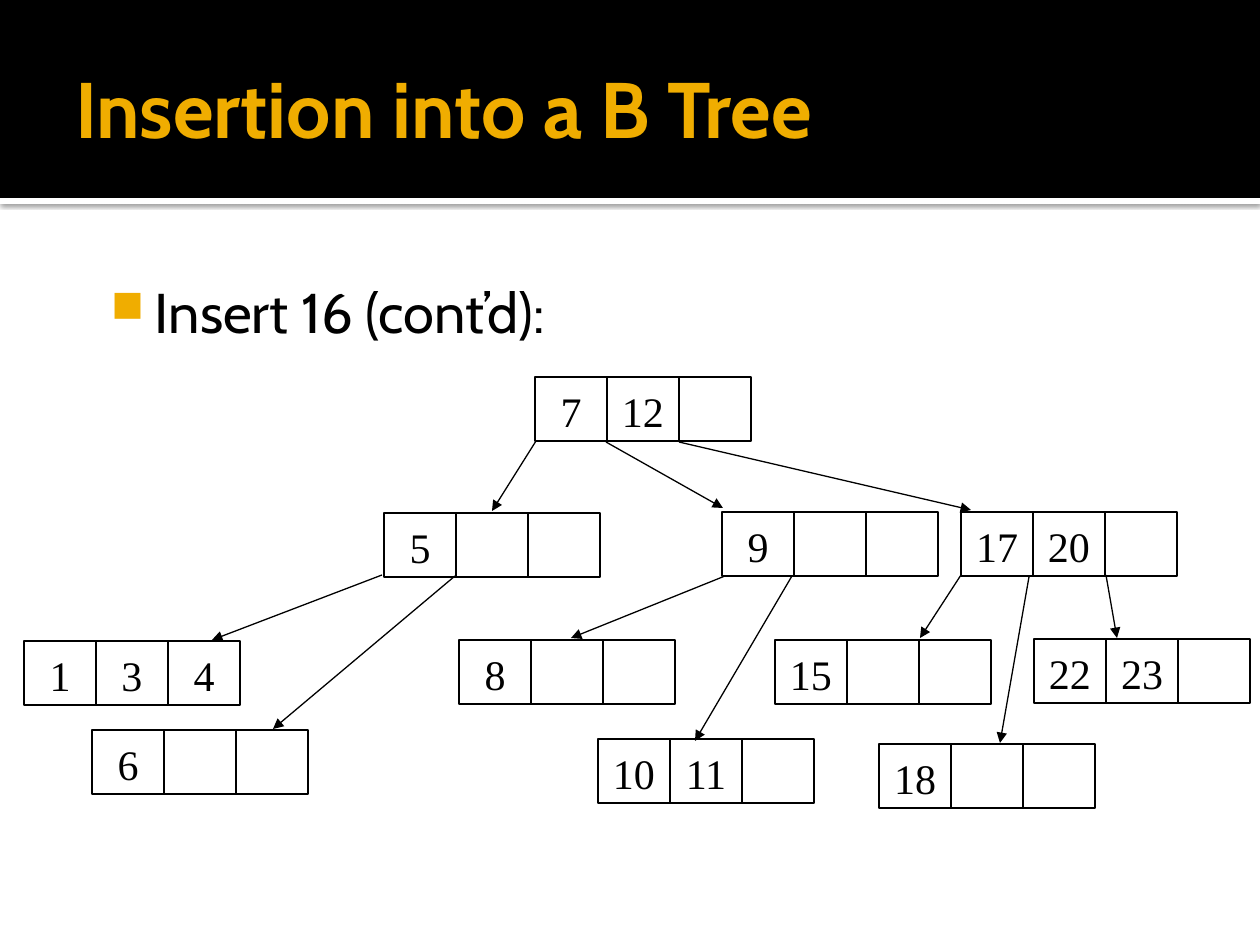
from lxml.etree import SubElement
from pptx import Presentation
from pptx.dml.color import RGBColor
from pptx.enum.shapes import MSO_CONNECTOR, MSO_SHAPE
from pptx.enum.text import MSO_ANCHOR, PP_ALIGN
from pptx.oxml import parse_xml
from pptx.oxml.ns import nsdecls, qn
from pptx.util import Emu, Pt

SCALE = 914400 / 126
CELL_W, CELL_H = 72, 64
BLACK, WHITE, GOLD = "000000", "FFFFFF", "F0AD00"

NODES = [
    (535, 377, ["7", "12", ""]),
    (384, 513, ["5", "", ""]),
    (722, 512, ["9", "", ""]),
    (961, 512, ["17", "20", ""]),
    (24, 641, ["1", "3", "4"]),
    (92, 730, ["6", "", ""]),
    (459, 640, ["8", "", ""]),
    (598, 739, ["10", "11", ""]),
    (775, 640, ["15", "", ""]),
    (879, 744, ["18", "", ""]),
    (1034, 639, ["22", "23", ""]),
]

ARROWS = [
    (536, 441, 492, 511), (606, 442, 723, 508), (679, 442, 971, 510),
    (382, 575, 212, 640), (455, 576, 273, 729),
    (725, 576, 571, 638), (792, 576, 695, 741),
    (961, 575, 920, 638), (1029, 577, 1000, 743), (1106, 575, 1117, 638),
]


def px(n):
    return Emu(round(n * SCALE))


def rgb(color):
    return RGBColor.from_string(color)


class Deck:
    title_font = "Cabin"
    key_font = "Times New Roman"

    def __init__(self, width, height):
        self.prs = Presentation()
        self.prs.slide_width, self.prs.slide_height = px(width), px(height)
        self.s = self.prs.slides.add_slide(self.prs.slide_layouts[5])

    def font(self, p, name, size, color, bold=False):
        p.font.name, p.font.size, p.font.bold = name, Pt(size), bold
        p.font.color.rgb = rgb(color)

    def margins(self, tf, left, top, right, bottom):
        tf.margin_left, tf.margin_top = px(left), px(top)
        tf.margin_right, tf.margin_bottom = px(right), px(bottom)

    def rect(self, x, y, w, h, fill=None, line=None):
        sp = self.s.shapes.add_shape(MSO_SHAPE.RECTANGLE, px(x), px(y), px(w), px(h))
        sp.shadow.inherit = False
        if fill:
            sp.fill.solid()
            sp.fill.fore_color.rgb = rgb(fill)
        else:
            sp.fill.background()
        if line:
            sp.line.color.rgb = rgb(line)
            sp.line.width = Pt(0.75)
        else:
            sp.line.fill.background()
        return sp

    def shadow(self, sp):
        effects = sp._element.spPr.find(qn("a:effectLst"))
        effects.append(parse_xml(
            f'<a:outerShdw {nsdecls("a")} blurRad="31750" dist="10160" dir="5400000">'
            f'<a:srgbClr val="{BLACK}"><a:alpha val="60000"/></a:srgbClr></a:outerShdw>'))

    def title(self, text, x, y, w, h):
        sp = self.s.shapes.title
        sp.left, sp.top, sp.width, sp.height = px(x), px(y), px(w), px(h)
        tf = sp.text_frame
        tf.text = text
        tf.vertical_anchor = MSO_ANCHOR.MIDDLE
        self.margins(tf, 12, 6, 6, 6)
        p = tf.paragraphs[0]
        p.alignment = PP_ALIGN.LEFT
        self.font(p, self.title_font, 45, GOLD, True)
        self.s.shapes._spTree.append(sp._element)

    def bullet(self, text, x, y, w, h):
        tf = self.s.shapes.add_textbox(px(x), px(y), px(w), px(h)).text_frame
        tf.word_wrap = True
        self.margins(tf, 8, 12, 12, 6)
        p = tf.paragraphs[0]
        p.text = text
        self.font(p, self.title_font, 32, BLACK)
        pPr = p._p.get_or_add_pPr()
        pPr.set("marL", str(px(60)))
        pPr.set("indent", str(px(-44)))
        marks = parse_xml(
            f'<a:pPr {nsdecls("a")}><a:buClr><a:srgbClr val="{GOLD}"/></a:buClr>'
            '<a:buSzPct val="80000"/><a:buChar char="■"/></a:pPr>')
        for i, mark in enumerate(list(marks)):
            pPr.insert(i, mark)

    def node(self, x, y, keys):
        for i, key in enumerate(keys):
            sp = self.rect(x + i * CELL_W, y, CELL_W, CELL_H, line=BLACK)
            if key:
                tf = sp.text_frame
                tf.vertical_anchor = MSO_ANCHOR.MIDDLE
                self.margins(tf, 0, 6, 0, 2)
                p = tf.paragraphs[0]
                p.text = key
                p.alignment = PP_ALIGN.CENTER
                self.font(p, self.key_font, 24, BLACK)

    def arrow(self, x1, y1, x2, y2):
        c = self.s.shapes.add_connector(
            MSO_CONNECTOR.STRAIGHT, px(x1), px(y1), px(x2), px(y2))
        c.line.color.rgb = rgb(BLACK)
        c.line.width = Pt(0.75)
        SubElement(c.line._get_or_add_ln(), qn("a:tailEnd"), type="triangle")
        SubElement(c._element.spPr, qn("a:effectLst"))


def main():
    deck = Deck(1260, 945)
    deck.shadow(deck.rect(0, 198, 1260, 6, fill=WHITE))
    deck.rect(0, 0, 1260, 198, fill=BLACK)
    deck.bullet("Insert 16 (cont’d):", 87, 266, 1135, 617)
    for node in NODES:
        deck.node(*node)
    for arrow in ARROWS:
        deck.arrow(*arrow)
    deck.title("Insertion into a B Tree", 63, 21, 1134, 173)
    deck.prs.save("out.pptx")


if __name__ == "__main__":
    main()
